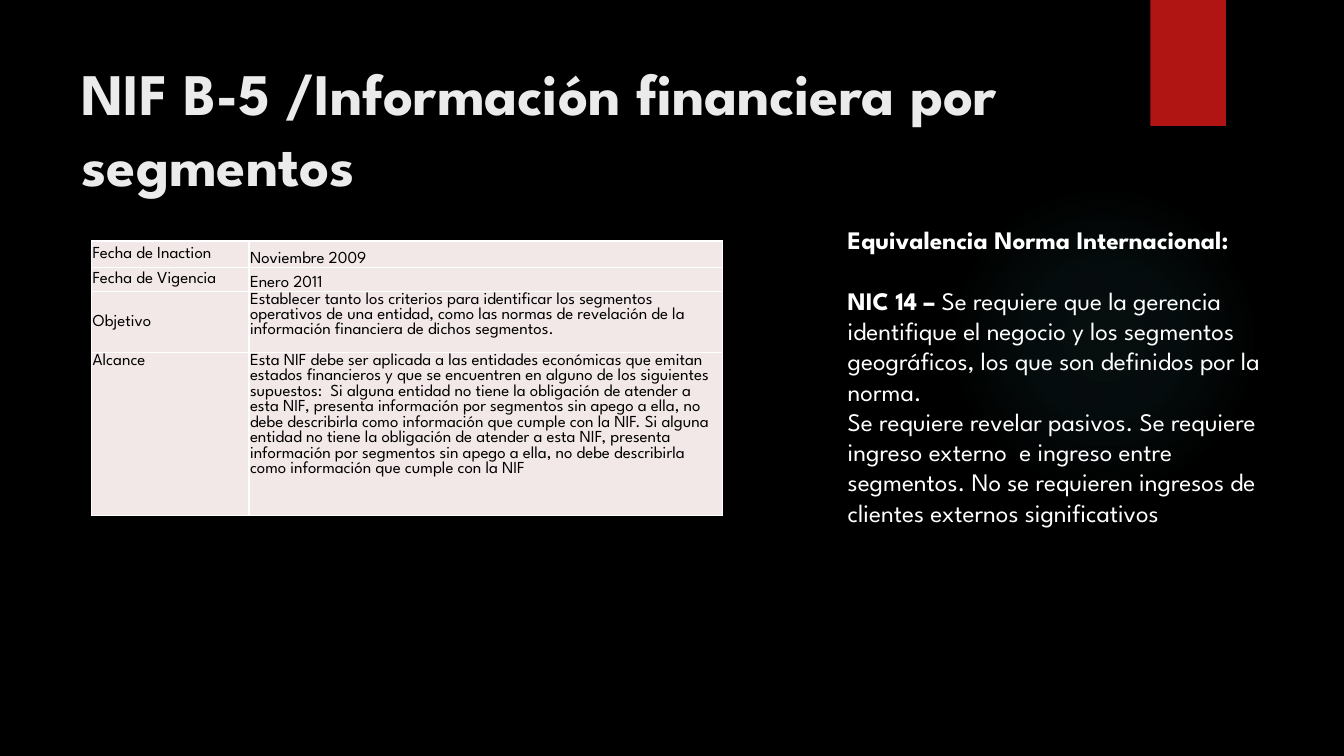
from lxml import etree
from pptx import Presentation
from pptx.dml.color import RGBColor
from pptx.enum.shapes import MSO_SHAPE
from pptx.enum.text import MSO_ANCHOR
from pptx.oxml import parse_xml
from pptx.oxml.ns import nsdecls, qn
from pptx.util import Inches, Pt

FONT = "League Spartan"
BLACK = RGBColor(0x00, 0x00, 0x00)
WHITE = RGBColor(0xFF, 0xFF, 0xFF)
TITLE_GRAY = RGBColor(0xEB, 0xEB, 0xEB)
RED = RGBColor(0xB0, 0x15, 0x13)
CELL_PINK = RGBColor(0xF2, 0xE8, 0xE7)

COLUMN_WIDTHS = [1.56, 4.7]
ROW_HEIGHTS = [0.26, 0.24, 0.57, 1.15]
TOP, MIDDLE, BOTTOM = MSO_ANCHOR.TOP, MSO_ANCHOR.MIDDLE, MSO_ANCHOR.BOTTOM
# Label, label anchor, description, description anchor
STANDARD_ROWS = [
    ("Fecha de Inaction", MIDDLE, "Noviembre 2009", BOTTOM),
    ("Fecha de Vigencia", MIDDLE, "Enero 2011", BOTTOM),
    ("Objetivo", MIDDLE,
     "Establecer tanto los criterios para identificar los segmentos operativos de una "
     "entidad, como las normas de revelación de la información financiera de dichos "
     "segmentos.", TOP),
    ("Alcance", TOP,
     "Esta NIF debe ser aplicada a las entidades económicas que emitan estados financieros "
     "y que se encuentren en alguno de los siguientes supuestos:  Si alguna entidad no tiene "
     "la obligación de atender a esta NIF, presenta información por segmentos sin apego a "
     "ella, no debe describirla como información que cumple con la NIF. Si alguna entidad no "
     "tiene la obligación de atender a esta NIF, presenta información por segmentos sin apego "
     "a ella, no debe describirla como información que cumple con la NIF", TOP),
]
# Paragraphs of (text, bold) runs, with the space before each in points
EQUIVALENCE = [
    ([("Equivalencia Norma Internacional:", True)], 0),
    ([("NIC 14 – ", True),
      ("Se requiere que la gerencia identifique el negocio y los segmentos geográficos, "
       "los que son definidos por la norma.", False)], 21.6),
    ([("Se requiere revelar pasivos. Se requiere ingreso externo  e ingreso entre segmentos. "
       "No se requieren ingresos de clientes externos significativos", False)], 0),
]


def style(paragraph, size, color):
    paragraph.font.name = FONT
    paragraph.font.size = Pt(size)
    paragraph.font.color.rgb = color


def add_plain_shape(slide, preset, box):
    shape = slide.shapes.add_shape(preset, *map(Inches, box))
    shape.shadow.inherit = False
    shape.line.fill.background()
    return shape


def add_text_frame(slide, box):
    frame = slide.shapes.add_textbox(*map(Inches, box)).text_frame
    frame.word_wrap = True
    return frame


def add_decoration(slide, glow_box, tab_box):
    # Faint radial glow
    glow = add_plain_shape(slide, MSO_SHAPE.OVAL, glow_box)
    stops = "".join(
        f'<a:gs pos="{position}000"><a:srgbClr val="50B9C1">'
        f'<a:alpha val="{alpha}000"/></a:srgbClr></a:gs>'
        for position, alpha in [(0, 7), (36, 6), (69, 0), (100, 0)])
    gradient = parse_xml(
        f'<a:gradFill {nsdecls("a")}><a:gsLst>{stops}</a:gsLst><a:path path="circle">'
        '<a:fillToRect l="50000" t="50000" r="50000" b="50000"/></a:path></a:gradFill>')
    glow.element.spPr.find(qn("a:prstGeom")).addnext(gradient)
    # Red tab
    tab = add_plain_shape(slide, MSO_SHAPE.RECTANGLE, tab_box)
    tab.fill.solid()
    tab.fill.fore_color.rgb = RED


def add_title(slide, box):
    frame = add_text_frame(slide, box)
    frame.vertical_anchor = MIDDLE
    paragraph = frame.paragraphs[0]
    paragraph.text = "NIF B-5 /Información financiera por segmentos"
    style(paragraph, 42, TITLE_GRAY)
    paragraph.font.bold = True


def add_borders(cell):
    properties = cell._tc.get_or_add_tcPr()
    for index, side in enumerate(["lnL", "lnR", "lnT", "lnB"]):
        line = parse_xml(
            f'<a:{side} {nsdecls("a")} w="12700"><a:solidFill>'
            f'<a:srgbClr val="{WHITE}"/></a:solidFill></a:{side}>')
        properties.insert(index, line)


def fill_cell(cell, text, anchor):
    cell.fill.solid()
    cell.fill.fore_color.rgb = CELL_PINK
    cell.margin_left = cell.margin_right = cell.margin_top = Inches(0.01)
    cell.margin_bottom = 0
    cell.vertical_anchor = anchor
    paragraph = cell.text_frame.paragraphs[0]
    paragraph.text = text
    style(paragraph, 12, BLACK)
    add_borders(cell)


def add_standard_table(slide, left, top):
    table = slide.shapes.add_table(
        len(ROW_HEIGHTS), len(COLUMN_WIDTHS), Inches(left), Inches(top),
        Inches(sum(COLUMN_WIDTHS)), Inches(sum(ROW_HEIGHTS))).table
    table.first_row = table.horz_banding = False
    for column, width in zip(table.columns, COLUMN_WIDTHS):
        column.width = Inches(width)
    for index, (label, label_anchor, text, text_anchor) in enumerate(STANDARD_ROWS):
        table.rows[index].height = Inches(ROW_HEIGHTS[index])
        fill_cell(table.cell(index, 0), label, label_anchor)
        fill_cell(table.cell(index, 1), text, text_anchor)


def add_equivalence(slide, box):
    frame = add_text_frame(slide, box)
    for index, (runs, space_before) in enumerate(EQUIVALENCE):
        paragraph = frame.add_paragraph() if index else frame.paragraphs[0]
        paragraph.space_before = Pt(space_before)
        style(paragraph, 18, WHITE)
        for text, bold in runs:
            run = paragraph.add_run()
            run.text = text
            run.font.bold = bold


def main():
    presentation = Presentation()
    presentation.slide_width, presentation.slide_height = Inches(13.33), Inches(7.5)
    slide = presentation.slides.add_slide(presentation.slide_layouts[6])
    slide.background.fill.solid()
    slide.background.fill.fore_color.rgb = BLACK
    add_decoration(slide, (9.41, 1.83, 3.08, 3.08), (11.41, 0, 0.75, 1.25))
    add_title(slide, (0.71, 0.5, 10.29, 1.53))
    add_standard_table(slide, 0.91, 2.39)
    add_equivalence(slide, (8.31, 2.18, 4.36, 4.04))
    presentation.save("out.pptx")


if __name__ == "__main__":
    main()
